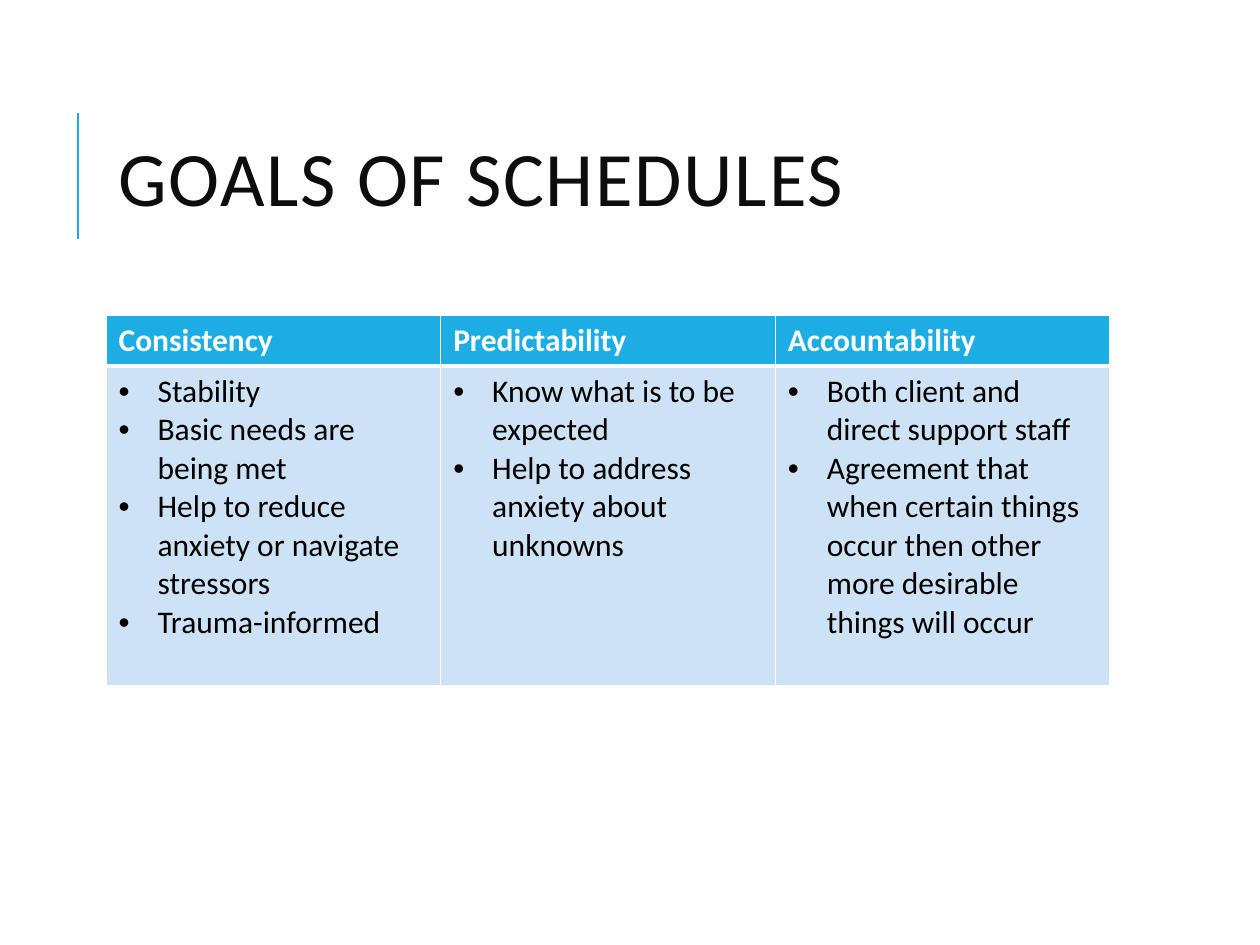
from lxml.etree import SubElement
from pptx import Presentation
from pptx.dml.color import RGBColor
from pptx.enum.shapes import MSO_CONNECTOR
from pptx.enum.text import MSO_ANCHOR, MSO_AUTO_SIZE, PP_ALIGN
from pptx.oxml.ns import qn
from pptx.util import Emu, Pt

SCALE = 914400 / 126
BLUE, PALE, WHITE, BLACK, INK = "1CADE4", "CDE3F5", "FFFFFF", "000000", "0D0D0D"
GOALS = {
    "Consistency": [
        "Stability",
        "Basic needs are being met",
        "Help to reduce anxiety or navigate stressors",
        "Trauma-informed",
    ],
    "Predictability": [
        "Know what is to be expected",
        "Help to address anxiety about unknowns",
    ],
    "Accountability": [
        "Both client and direct support staff",
        "Agreement that when certain things occur then other more desirable "
        "things will occur",
    ],
}


def px(n):
    return Emu(round(n * SCALE))


def color(code):
    return RGBColor.from_string(code)


class Deck:
    font = "Calibri"

    def __init__(self, wide, high):
        self.prs = Presentation()
        self.prs.slide_width, self.prs.slide_height = px(wide), px(high)
        self.slide = self.prs.slides.add_slide(self.prs.slide_layouts[5])

    def run(self, para, text, size, tint, bold=False):
        run = para.add_run()
        run.text = text
        font = run.font
        font.name, font.size, font.bold = self.font, Pt(size), bold
        font.color.rgb = color(tint)
        return run

    def line(self, x1, y1, x2, y2, tint, width):
        line = self.slide.shapes.add_connector(
            MSO_CONNECTOR.STRAIGHT, px(x1), px(y1), px(x2), px(y2))
        line.line.color.rgb = color(tint)
        line.line.width = Pt(width)
        SubElement(line._element.spPr, qn("a:effectLst"))

    def title(self, text, left, top, wide, high):
        title = self.slide.shapes.title
        title.left, title.top = px(left), px(top)
        title.width, title.height = px(wide), px(high)
        frame = title.text_frame
        frame.word_wrap = True
        frame.auto_size = MSO_AUTO_SIZE.NONE
        frame.vertical_anchor = MSO_ANCHOR.MIDDLE
        para = frame.paragraphs[0]
        para.alignment, para.line_spacing = PP_ALIGN.LEFT, 0.8
        run = self.run(para, text, 44, INK)
        run.font._element.set("spc", "100")

    def bullet(self, para, indent):
        props = para._p.get_or_add_pPr()
        props.set("marL", str(px(indent)))
        props.set("indent", str(-px(indent)))
        SubElement(props, qn("a:buFont"), typeface="Arial")
        SubElement(props, qn("a:buChar"), char="•")

    def cell(self, cell, lines, fill, tint, head):
        # Borders come before the fill in the cell properties
        props = cell._tc.get_or_add_tcPr()
        thick = "lnB" if head else "lnT"
        for side in ("lnL", "lnR", "lnT", "lnB"):
            width = Pt(3 if side == thick else 1)
            edge = SubElement(props, qn(f"a:{side}"), w=str(width))
            paint = SubElement(edge, qn("a:solidFill"))
            SubElement(paint, qn("a:srgbClr"), val=WHITE)
        cell.fill.solid()
        cell.fill.fore_color.rgb = color(fill)
        frame = cell.text_frame
        for i, text in enumerate(lines):
            para = frame.add_paragraph() if i else frame.paragraphs[0]
            if not head:
                self.bullet(para, 39)
            self.run(para, text, 18, tint, head)

    def table(self, data, left, top, wide, rows):
        table = self.slide.shapes.add_table(
            len(rows), len(data), px(left), px(top), px(wide), px(sum(rows))).table
        for row, high in zip(table.rows, rows):
            row.height = px(high)
        for col, (head, items) in enumerate(data.items()):
            self.cell(table.cell(0, col), [head], BLUE, WHITE, True)
            self.cell(table.cell(1, col), items, PALE, BLACK, False)


def main():
    deck = Deck(1260, 945)
    # Accent line and title
    deck.line(78, 239, 78, 113, BLUE, 1.5)
    deck.title("GOALS OF SCHEDULES", 106, 81, 1004, 207)
    # Goals, one column each
    deck.table(GOALS, 106, 315, 1004, [51, 320])
    deck.prs.save("out.pptx")


if __name__ == "__main__":
    main()
